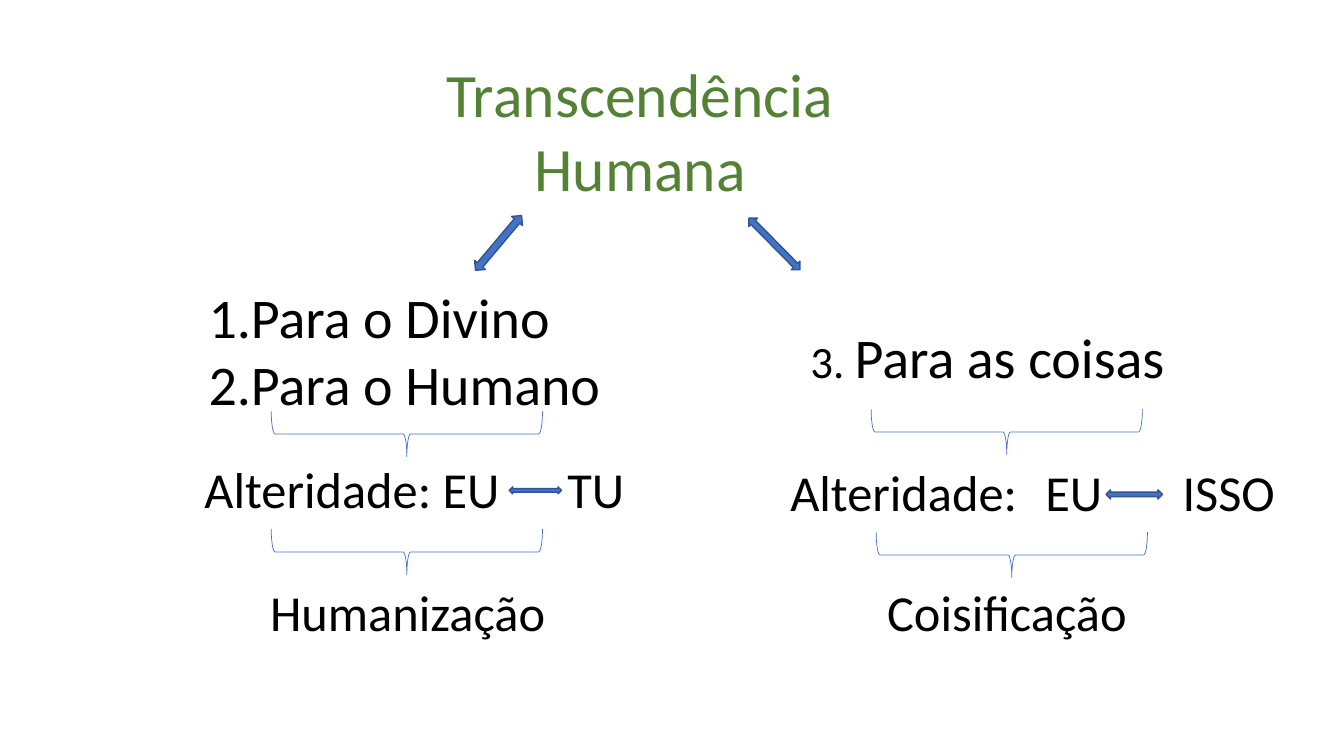
from lxml import etree
from pptx import Presentation
from pptx.dml.color import RGBColor
from pptx.enum import shapes, text
from pptx.oxml.ns import qn
from pptx.util import Inches, Pt

GREEN = RGBColor(0x54, 0x82, 0x35)
BLACK = RGBColor(0x00, 0x00, 0x00)
BLUE = RGBColor(0x44, 0x72, 0xC4)
DARK_BLUE = RGBColor(0x32, 0x54, 0x91)


class Diagram:
    font = "Calibri"

    def __init__(self, slide):
        self.s = slide

    def text(self, box, *paragraphs, size=36, color=BLACK, align=None,
             wrap=True, numbered=False, indent=0, tabs=()):
        """Each paragraph is a string or a list of (string, size) runs."""
        tf = self.s.shapes.add_textbox(*map(Inches, box)).text_frame
        tf.word_wrap = wrap
        tf.auto_size = text.MSO_AUTO_SIZE.SHAPE_TO_FIT_TEXT
        for i, content in enumerate(paragraphs):
            p = tf.add_paragraph() if i else tf.paragraphs[0]
            p.alignment = align
            self.layout(p, numbered, indent, tabs)
            runs = [(content, size)] if isinstance(content, str) else content
            for words, points in runs:
                r = p.add_run()
                r.text = words
                r.font.name = self.font
                r.font.size = Pt(points)
                r.font.color.rgb = color

    def layout(self, p, numbered, indent, tabs):
        """Set the numbering, left indent and tab stops of a paragraph."""
        pPr = p._p.get_or_add_pPr()
        pPr.set("marL", str(Inches(indent)))
        if numbered:
            pPr.set("indent", str(-Inches(indent)))
            etree.SubElement(pPr, qn("a:buFontTx"))
            etree.SubElement(pPr, qn("a:buAutoNum"), type="arabicPeriod")
        if tabs:
            stops = etree.SubElement(pPr, qn("a:tabLst"))
            for pos in tabs:
                etree.SubElement(stops, qn("a:tab"), pos=str(Inches(pos)), algn="l")

    def shape(self, kind, box, line, width, fill=None, rotation=0):
        sp = self.s.shapes.add_shape(kind, *map(Inches, box))
        sp.shadow.inherit = False
        sp.rotation = rotation
        if fill is None:
            sp.fill.background()
        else:
            sp.fill.solid()
            sp.fill.fore_color.rgb = fill
        sp.line.color.rgb = line
        sp.line.width = Pt(width)

    def arrow(self, box, rotation=0):
        self.shape(shapes.MSO_SHAPE.LEFT_RIGHT_ARROW, box, DARK_BLUE, 1,
                   BLUE, rotation)

    def brace(self, left, top):
        self.shape(shapes.MSO_SHAPE.LEFT_BRACE, (left, top, 0.45, 2.69),
                   BLUE, 0.5, rotation=270)


def main():
    prs = Presentation()
    prs.slide_width, prs.slide_height = Inches(13.33), Inches(7.5)
    d = Diagram(prs.slides.add_slide(prs.slide_layouts[6]))

    d.text((3.81, 0.51, 5.08, 1.58), "Transcendência Humana", size=44,
           color=GREEN, align=text.PP_ALIGN.CENTER)
    d.arrow((4.59, 2.34, 0.71, 0.14), 310.1)
    d.arrow((7.32, 2.36, 0.72, 0.12), 45.4)

    # Left branch: the divine and the human
    d.text((1.97, 2.75, 4.13, 1.45), "Para o Divino", "Para o Humano",
           size=40, wrap=False, numbered=True, indent=0.38)
    d.text((1.93, 4.5, 5.34, 0.71), "Alteridade: EU\tTU", tabs=[3.6])
    d.arrow((5.05, 4.83, 0.52, 0.07))
    d.text((2.58, 5.72, 3.05, 0.71), "Humanização")

    # Right branch: things
    d.text((7.94, 3.15, 4.02, 1.85), [("3. ", 32), ("Para as coisas", 40)])
    d.text((7.64, 4.53, 5.24, 0.71), "Alteridade:\tEU\tISSO",
           indent=0.1, tabs=[2.53, 3.89])
    d.arrow((10.97, 4.86, 0.56, 0.09))
    d.text((8.7, 5.72, 4.64, 0.71), "Coisificação")

    for left, top in ((3.81, 2.96), (3.81, 4.13), (9.76, 2.94), (9.81, 4.16)):
        d.brace(left, top)

    prs.save("out.pptx")


if __name__ == "__main__":
    main()
